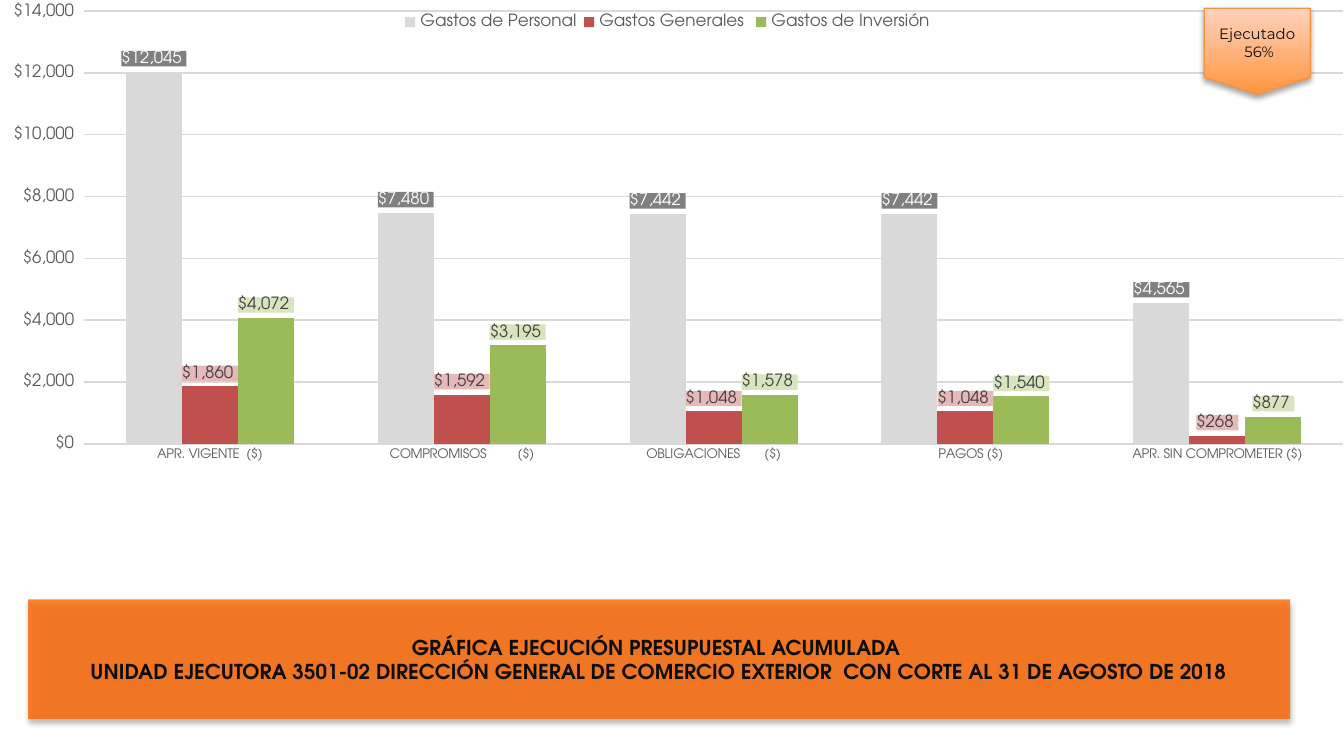
"""Build the slide on accumulated budget execution, August 2018."""
from dataclasses import dataclass

from lxml import etree
from pptx import Presentation
from pptx import util as u
from pptx.chart.data import CategoryChartData
from pptx.dml.color import RGBColor
from pptx.enum import chart as charts, shapes, text
from pptx.oxml import parse_xml
from pptx.oxml.ns import nsdecls, qn


@dataclass(frozen=True)
class Theme:
    """Colours, fonts and type sizes of the slide."""
    font: str = "TeX Gyre Adventor"
    badge_font: str = "Montserrat"
    ink: str = "0D0D0D"
    axis: str = "595959"
    grid: str = "D9D9D9"
    banner: str = "FF6600"
    badge_line: str = "F69240"
    badge_gradient: tuple = ("FF953E", "FFD2BD")
    title_size: float = 11
    value_size: float = 9
    badge_size: float = 8
    category_size: float = 7


THEME = Theme()
WIDTH = u.Inches(10)
HEIGHT = WIDTH * 9 // 16
MONEY = '"$"#,##0_);[Red]\\("$"#,##0\\)'
CATEGORIES = ["APR. VIGENTE  ($)", "COMPROMISOS         ($)", "OBLIGACIONES       ($)",
              "   PAGOS ($)", "APR. SIN COMPROMETER ($)"]
SERIES = [
    ("Gastos de Personal", (12045, 7480, 7442, 7442, 4565), "D9D9D9", "808080", "FFFFFF"),
    ("Gastos Generales ", (1860, 1592, 1048, 1048, 268), "C0504D", "E6B9B8", "404040"),
    ("Gastos de Inversión ", (4072, 3195, 1578, 1540, 877), "9BBB59", "D7E4BD", "404040"),
]
TITLE = ["GRÁFICA EJECUCIÓN PRESUPUESTAL ACUMULADA ",
         "UNIDAD EJECUTORA 3501-02 DIRECCIÓN GENERAL DE COMERCIO EXTERIOR  "
         "CON CORTE AL 31 DE AGOSTO DE 2018"]


def place(left, top, width, height):
    """Turn percentages of the slide into lengths."""
    return [int(share * side / 100) for share, side in
            ((left, WIDTH), (top, HEIGHT), (width, WIDTH), (height, HEIGHT))]


def style_font(font, size, color, name=THEME.font, bold=False):
    """Set the face, size and colour of a font."""
    font.name, font.size, font.bold = name, u.Pt(size), bold
    font.color.rgb = RGBColor.from_string(color)


def add_panel(slide, kind, box, lines, size, name=THEME.font, bold=False):
    """Add a shape with centred text and a soft shadow below it."""
    shape = slide.shapes.add_shape(kind, *place(*box))
    shape.shadow.inherit = False
    effects = shape._element.spPr.find(qn("a:effectLst"))
    effects.append(parse_xml(
        f'<a:outerShdw {nsdecls("a")} blurRad="{u.Pt(3.1)}" dist="{u.Pt(1.8)}" dir="5400000" '
        'rotWithShape="0"><a:srgbClr val="000000"><a:alpha val="35000"/></a:srgbClr></a:outerShdw>'))
    frame = shape.text_frame
    frame.word_wrap = True
    frame.vertical_anchor = text.MSO_ANCHOR.MIDDLE
    frame.text = "\n".join(lines)
    for paragraph in frame.paragraphs:
        paragraph.alignment = text.PP_ALIGN.CENTER
        style_font(paragraph.font, size, THEME.ink, name, bold)
    return shape


def add_banner(slide):
    """Add the translucent title banner."""
    banner = add_panel(slide, shapes.MSO_SHAPE.RECTANGLE, (2.1, 79.3, 93.9, 15.8),
                       TITLE, THEME.title_size, bold=True)
    banner.fill.solid()
    banner.fill.fore_color.rgb = RGBColor.from_string(THEME.banner)
    color = banner._element.spPr.find(qn("a:solidFill"))[0]
    etree.SubElement(color, qn("a:alpha"), val="80000")
    banner.line.fill.background()


def add_badge(slide):
    """Add the badge with the executed share."""
    badge = add_panel(slide, shapes.MSO_SHAPE.FLOWCHART_OFFPAGE_CONNECTOR,
                      (89.6, 1.1, 7.9, 11.4), ["Ejecutado  56%"],
                      THEME.badge_size, THEME.badge_font)
    badge.fill.gradient()
    badge.fill.gradient_angle = 90
    for stop, color in zip(badge.fill.gradient_stops, THEME.badge_gradient):
        stop.color.rgb = RGBColor.from_string(color)
    badge.line.color.rgb = RGBColor.from_string(THEME.badge_line)
    badge.line.width = u.Pt(0.75)


def set_layout(element, index, box, inner=False):
    """Fix a chart part at percentages of the chart area."""
    for old in element.findall(qn("c:layout")):
        element.remove(old)
    target = '<c:layoutTarget val="inner"/>' if inner else ""
    modes = '<c:xMode val="edge"/><c:yMode val="edge"/>'
    sizes = "".join(f'<c:{key} val="{value / 100}"/>' for key, value in zip("xywh", box))
    element.insert(index, parse_xml(
        f'<c:layout {nsdecls("c")}><c:manualLayout>{target}{modes}{sizes}'
        '</c:manualLayout></c:layout>'))


def style_axis(axis, size):
    """Strip an axis down to its labels."""
    axis.major_tick_mark = axis.minor_tick_mark = charts.XL_TICK_MARK.NONE
    axis.format.line.fill.background()
    style_font(axis.tick_labels.font, size, THEME.axis)


def style_series(series, color, label_fill, label_color):
    """Colour one series and its boxed value labels."""
    series.format.fill.solid()
    series.format.fill.fore_color.rgb = RGBColor.from_string(color)
    labels = series.data_labels
    labels.show_value = True
    labels.number_format, labels.number_format_is_linked = MONEY, False
    labels.position = charts.XL_LABEL_POSITION.OUTSIDE_END
    style_font(labels.font, THEME.value_size, label_color)
    labels._element.find(qn("c:txPr")).addprevious(parse_xml(
        f'<c:spPr {nsdecls("c", "a")}><a:solidFill><a:srgbClr val="{label_fill}"/>'
        '</a:solidFill></c:spPr>'))


def add_budget_chart(slide):
    """Add the clustered columns of spending by stage."""
    data = CategoryChartData(number_format=MONEY)
    data.categories = CATEGORIES
    for name, values, *_ in SERIES:
        data.add_series(name, values)
    chart = slide.shapes.add_chart(charts.XL_CHART_TYPE.COLUMN_CLUSTERED,
                                   *place(0, 0, 100, 77.9), data).chart
    chart.has_title = False
    style_font(chart.font, 10, "000000")
    plot = chart.plots[0]
    plot.gap_width, plot.overlap, plot.vary_by_categories = 150, 0, False
    for series, (_, _, *colors) in zip(plot.series, SERIES):
        style_series(series, *colors)

    style_axis(chart.category_axis, THEME.category_size)
    axis = chart.value_axis
    style_axis(axis, THEME.value_size)
    axis.minimum_scale, axis.maximum_scale, axis.major_unit = 0, 14000, 2000
    axis.tick_labels.number_format = MONEY
    axis.tick_labels.number_format_is_linked = False
    axis.has_major_gridlines = True
    axis.major_gridlines.format.line.color.rgb = RGBColor.from_string(THEME.grid)
    axis.major_gridlines.format.line.width = u.Pt(0.75)

    chart.has_legend = True
    legend = chart.legend
    legend.position = charts.XL_LEGEND_POSITION.TOP
    legend.include_in_layout = False
    style_font(legend.font, THEME.value_size, THEME.axis)
    set_layout(legend._element, 1, (29.6, 1, 40.5, 5.5))
    plot_area = chart._chartSpace.chart.plotArea
    set_layout(plot_area, 0, (6.25, 1.9, 93.75, 73.5), inner=True)


def main():
    """Build and save the slide."""
    presentation = Presentation()
    presentation.slide_width, presentation.slide_height = WIDTH, HEIGHT
    slide = presentation.slides.add_slide(presentation.slide_layouts[6])
    add_banner(slide)
    add_budget_chart(slide)
    add_badge(slide)
    presentation.save("out.pptx")


if __name__ == "__main__":
    main()
